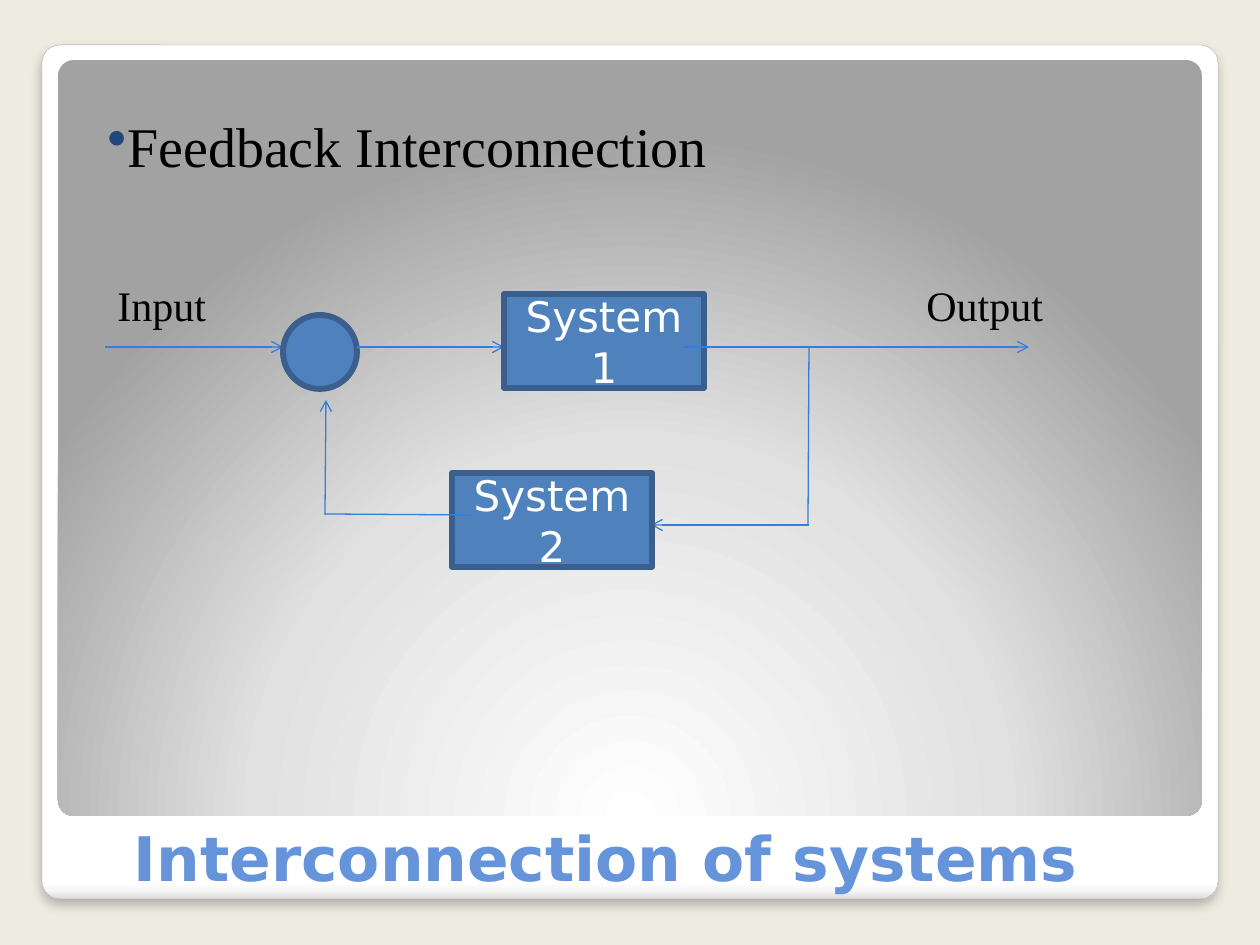
from dataclasses import dataclass

from lxml.etree import SubElement
from pptx import Presentation
from pptx.dml.color import RGBColor
from pptx.enum.shapes import MSO_CONNECTOR as Connector, MSO_SHAPE as Shape
from pptx.enum.text import MSO_ANCHOR as Anchor, PP_ALIGN as Align
from pptx.oxml.ns import qn
from pptx.util import Emu, Pt

PX = 914400 / 126  # EMU in one px

BACKGROUND = RGBColor(0xEE, 0xEC, 0xE1)
FRAME_LINE = RGBColor(0xA4, 0xA4, 0xA4)
TITLE = RGBColor(0x65, 0x94, 0xDA)
BULLET = RGBColor(0x1F, 0x49, 0x7D)
BLOCK = RGBColor(0x4F, 0x81, 0xBD)
BLOCK_LINE = RGBColor(0x3A, 0x5F, 0x8C)
ARROW = RGBColor(0x33, 0x7E, 0xD9)
BLACK = RGBColor(0, 0, 0)
WHITE = RGBColor(0xFF, 0xFF, 0xFF)
LIGHT = RGBColor(0xF7, 0xF7, 0xF7)
EDGE = RGBColor(0xDA, 0xDA, 0xDA)
SILVER = RGBColor(0xE1, 0xE1, 0xE1)
GREY = RGBColor(0xA2, 0xA2, 0xA2)

SANS = "DejaVu Sans"
SERIF = "Times New Roman"


@dataclass
class Box:
    x: int
    y: int
    w: int
    h: int

    def emu(self) -> list[Emu]:
        return [px(v) for v in (self.x, self.y, self.w, self.h)]


@dataclass
class Block:
    box: Box
    kind: Shape = Shape.RECTANGLE
    text: str = ""


@dataclass
class Wire:
    x1: int
    y1: int
    x2: int
    y2: int
    arrow: bool = True


@dataclass
class Label:
    box: Box
    text: str
    size: float = 24
    font: str = SERIF
    color: RGBColor = BLACK


def px(value: int) -> Emu:
    return Emu(round(value * PX))


def set_font(p, size: float, font: str, color: RGBColor) -> None:
    p.font.size = Pt(size)
    p.font.name = font
    p.font.color.rgb = color


def add_panel(shapes, box: Box, stops: list[tuple[int, RGBColor]], radial: bool):
    """Rounded panel with a gradient fill."""
    s = shapes.add_shape(Shape.ROUNDED_RECTANGLE, *box.emu())
    s.adjustments[0] = 0.021
    s.shadow.inherit = False
    s.line.fill.background()
    s.fill.gradient()
    grad = s.fill._fill._gradFill
    for child in list(grad):
        grad.remove(child)
    gs_lst = SubElement(grad, qn("a:gsLst"))
    for percent, color in stops:
        gs = SubElement(gs_lst, qn("a:gs"), pos=str(percent * 1000))
        SubElement(gs, qn("a:srgbClr"), val=str(color))
    if radial:
        circle = SubElement(grad, qn("a:path"), {"path": "circle"})
        SubElement(circle, qn("a:fillToRect"), l="50000", t="175000", r="50000", b="-75000")
    else:
        SubElement(grad, qn("a:lin"), ang="5400000", scaled="0")
    return s


def add_drop_shadow(s) -> None:
    effects = s._element.spPr.find(qn("a:effectLst"))
    shadow = SubElement(effects, qn("a:outerShdw"), blurRad=str(Pt(6)), dist=str(Pt(4)),
                        dir="5400000", algn="tl", rotWithShape="0")
    color = SubElement(shadow, qn("a:srgbClr"), val=str(BLACK))
    SubElement(color, qn("a:alpha"), val="25000")


def add_block(shapes, block: Block) -> None:
    s = shapes.add_shape(block.kind, *block.box.emu())
    s.shadow.inherit = False
    s.fill.solid()
    s.fill.fore_color.rgb = BLOCK
    s.line.color.rgb = BLOCK_LINE
    s.line.width = Pt(3.35)
    if block.text:
        tf = s.text_frame
        tf.vertical_anchor = Anchor.MIDDLE
        p = tf.paragraphs[0]
        p.text = block.text
        p.alignment = Align.CENTER
        set_font(p, 24, SANS, WHITE)


def add_wire(shapes, wire: Wire) -> None:
    ends = [px(v) for v in (wire.x1, wire.y1, wire.x2, wire.y2)]
    s = shapes.add_connector(Connector.STRAIGHT, *ends)
    s.line.color.rgb = ARROW
    s.line.width = Pt(0.75)
    if wire.arrow:
        SubElement(s.line._get_or_add_ln(), qn("a:tailEnd"), type="arrow")
    SubElement(s._element.spPr, qn("a:effectLst"))


def add_label(shapes, label: Label):
    tf = shapes.add_textbox(*label.box.emu()).text_frame
    tf.word_wrap = True
    p = tf.paragraphs[0]
    p.text = label.text
    set_font(p, label.size, label.font, label.color)
    return tf


def add_bullet(p) -> None:
    props = p._p.get_or_add_pPr()
    color = SubElement(props, qn("a:buClr"))
    SubElement(color, qn("a:srgbClr"), val=str(BULLET))
    SubElement(props, qn("a:buChar"), char="•")


# Signal path from left to right, then the feedback loop; listed back to front
DIAGRAM = [
    Wire(105, 347, 283, 347),
    Block(Box(283, 315, 74, 74), Shape.OVAL),
    Wire(357, 347, 504, 347),
    Block(Box(504, 294, 200, 94), text="System 1"),
    Wire(683, 347, 1029, 347),
    Wire(809, 347, 808, 525, arrow=False),
    Wire(809, 525, 651, 525),
    Block(Box(452, 473, 200, 94), text="System 2"),
    Wire(473, 515, 325, 514, arrow=False),
    Wire(325, 515, 326, 400),
]


def main() -> None:
    prs = Presentation()
    prs.slide_width, prs.slide_height = px(1260), px(945)
    slide = prs.slides.add_slide(prs.slide_layouts[6])
    slide.background.fill.solid()
    slide.background.fill.fore_color.rgb = BACKGROUND
    shapes = slide.shapes

    # Frame and inner panel
    frame = add_panel(shapes, Box(42, 45, 1176, 854),
                      [(0, WHITE), (98, WHITE), (99, LIGHT), (100, EDGE)], radial=False)
    frame.line.color.rgb = FRAME_LINE
    frame.line.width = Pt(0.16)
    add_drop_shadow(frame)
    add_panel(shapes, Box(58, 60, 1144, 756),
              [(0, WHITE), (55, SILVER), (100, GREY)], radial=True)

    # Title
    tf = add_label(shapes, Label(Box(42, 819, 1127, 82), "Interconnection of systems",
                                 35.1, SANS, TITLE))
    tf.vertical_anchor = Anchor.BOTTOM
    p = tf.paragraphs[0]
    p.alignment = Align.CENTER
    p.line_spacing = 0.9
    p.font.bold = True

    # Bullet heading
    tf = add_label(shapes, Label(Box(95, 105, 819, 81), "Feedback Interconnection", 32))
    add_bullet(tf.paragraphs[0])

    # Diagram
    for part in DIAGRAM:
        if isinstance(part, Wire):
            add_wire(shapes, part)
        else:
            add_block(shapes, part)
    add_label(shapes, Label(Box(105, 273, 136, 64), "Input"))
    add_label(shapes, Label(Box(914, 273, 158, 64), "Output"))

    prs.save("out.pptx")


if __name__ == "__main__":
    main()
